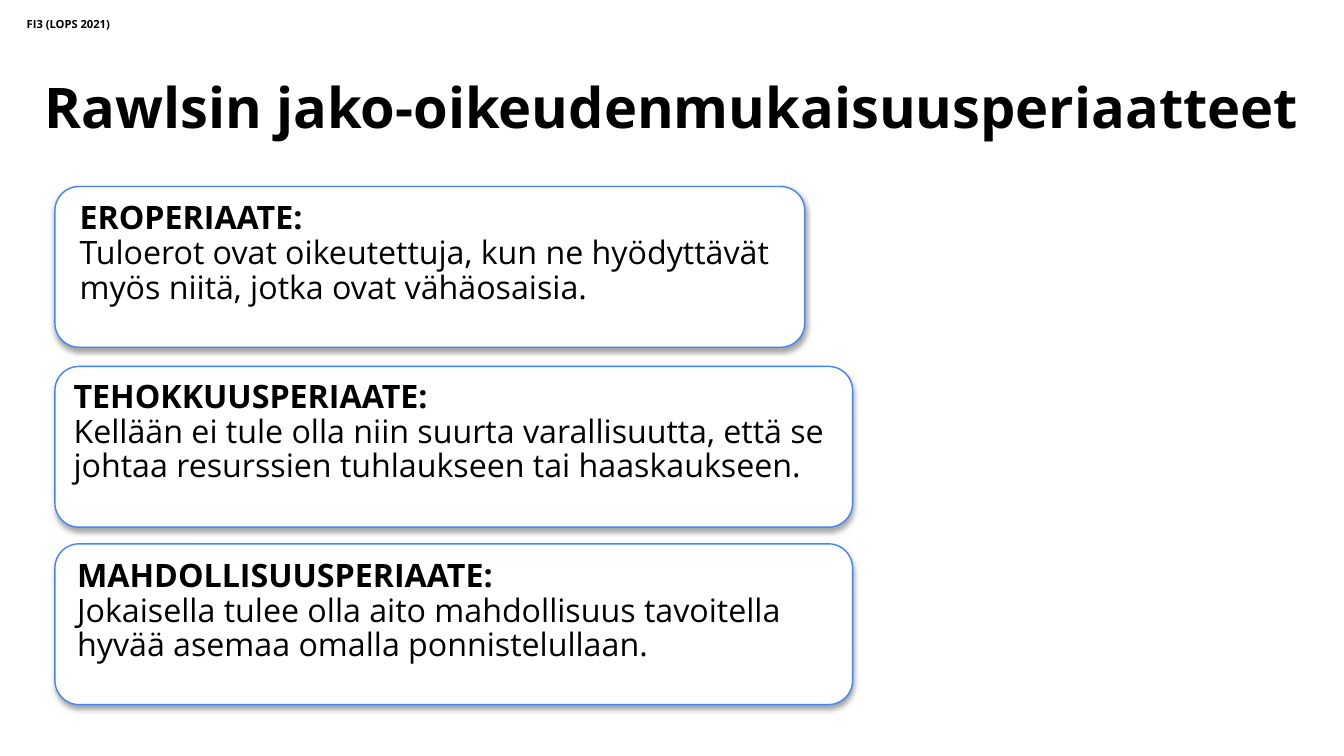
from lxml.etree import SubElement
from pptx import Presentation
from pptx.dml.color import RGBColor
from pptx.enum.shapes import MSO_SHAPE
from pptx.enum.text import MSO_ANCHOR, PP_ALIGN
from pptx.oxml.ns import qn
from pptx.util import Inches, Pt

BLACK = RGBColor(0x00, 0x00, 0x00)
WHITE = RGBColor(0xFF, 0xFF, 0xFF)
BLUE = RGBColor(0x42, 0x85, 0xF4)
FONT = "Open Sans"

LEFT, HIGH = 1.09, 3.19
# card top, card width, text box (left and top offset, width, height), heading, body
CARDS = [
    (3.7, 14.88, (0.36, 0.17, 14.37, 2.85), "EROPERIAATE:",
     "Tuloerot ovat oikeutettuja, kun ne hyödyttävät myös niitä, "
     "jotka ovat vähäosaisia."),
    (7.27, 15.83, (0.24, 0.15, 16.91, 2.85), "TEHOKKUUSPERIAATE:",
     "Kellään ei tule olla niin suurta varallisuutta, että se johtaa "
     "resurssien tuhlaukseen tai haaskaukseen."),
    (10.79, 15.83, (0.31, 0.18, 14.8, 2.85), "MAHDOLLISUUSPERIAATE:",
     "Jokaisella tulee olla aito mahdollisuus tavoitella hyvää asemaa "
     "omalla ponnistelullaan."),
]


def add_text(slide, box, lines, size, inset=0.13, wrap=True,
             align=PP_ALIGN.LEFT, anchor=MSO_ANCHOR.TOP, spacing=0.9):
    """Add a text box; lines holds (text, bold) pairs, one per paragraph."""
    frame = slide.shapes.add_textbox(*map(Inches, box)).text_frame
    frame.word_wrap = wrap
    frame.vertical_anchor = anchor
    frame.margin_left = frame.margin_right = Inches(inset)
    frame.margin_top = frame.margin_bottom = Inches(inset)
    for i, (text, bold) in enumerate(lines):
        para = frame.add_paragraph() if i else frame.paragraphs[0]
        para.alignment = align
        para.line_spacing = spacing
        run = para.add_run()
        run.text = text
        run.font.name = FONT
        run.font.size = Pt(size)
        run.font.bold = bold
        run.font.color.rgb = BLACK


def add_shadow(shape):
    """Give the shape a soft shadow straight below it."""
    shape.shadow.inherit = False
    effects = shape.element.spPr.find(qn("a:effectLst"))
    outer = SubElement(effects, qn("a:outerShdw"), blurRad=str(Pt(8)),
                       dist=str(Pt(4)), dir="5400000", rotWithShape="0")
    color = SubElement(outer, qn("a:srgbClr"), val=str(BLACK))
    SubElement(color, qn("a:alpha"), val="35000")


def add_card(slide, box, inner, heading, body):
    """Add a rounded card with a bold heading above its body text."""
    left, top, *_ = box
    card = slide.shapes.add_shape(MSO_SHAPE.ROUNDED_RECTANGLE,
                                  *map(Inches, box))
    card.adjustments[0] = 0.15
    card.fill.solid()
    card.fill.fore_color.rgb = WHITE
    card.line.color.rgb = BLUE
    card.line.width = Pt(2)
    add_shadow(card)
    dx, dy, width, height = inner
    add_text(slide, (left + dx, top + dy, width, height),
             [(heading, True), (body, False)], 46)


def add_header(slide, box):
    """Add the course label and the title below it."""
    left, top, width, _ = box
    add_text(slide, (left, top, 1.78, 0.42), [("FI3 (LOPS 2021)", True)], 16,
             inset=0.06, wrap=False, anchor=MSO_ANCHOR.MIDDLE)
    add_text(slide, (left + 0.28, top + 1.17, width - 0.28, 1.78),
             [("Rawlsin jako-oikeudenmukaisuusperiaatteet", True)], 80,
             wrap=False, align=PP_ALIGN.CENTER)


def main():
    deck = Presentation()
    deck.slide_width = Inches(26.67)
    deck.slide_height = Inches(15)
    slide = deck.slides.add_slide(deck.slide_layouts[6])

    add_header(slide, (0.47, 0.28, 25.45, 2.95))
    for top, width, inner, heading, body in CARDS:
        add_card(slide, (LEFT, top, width, HIGH), inner, heading, body)

    deck.save("out.pptx")


if __name__ == "__main__":
    main()
